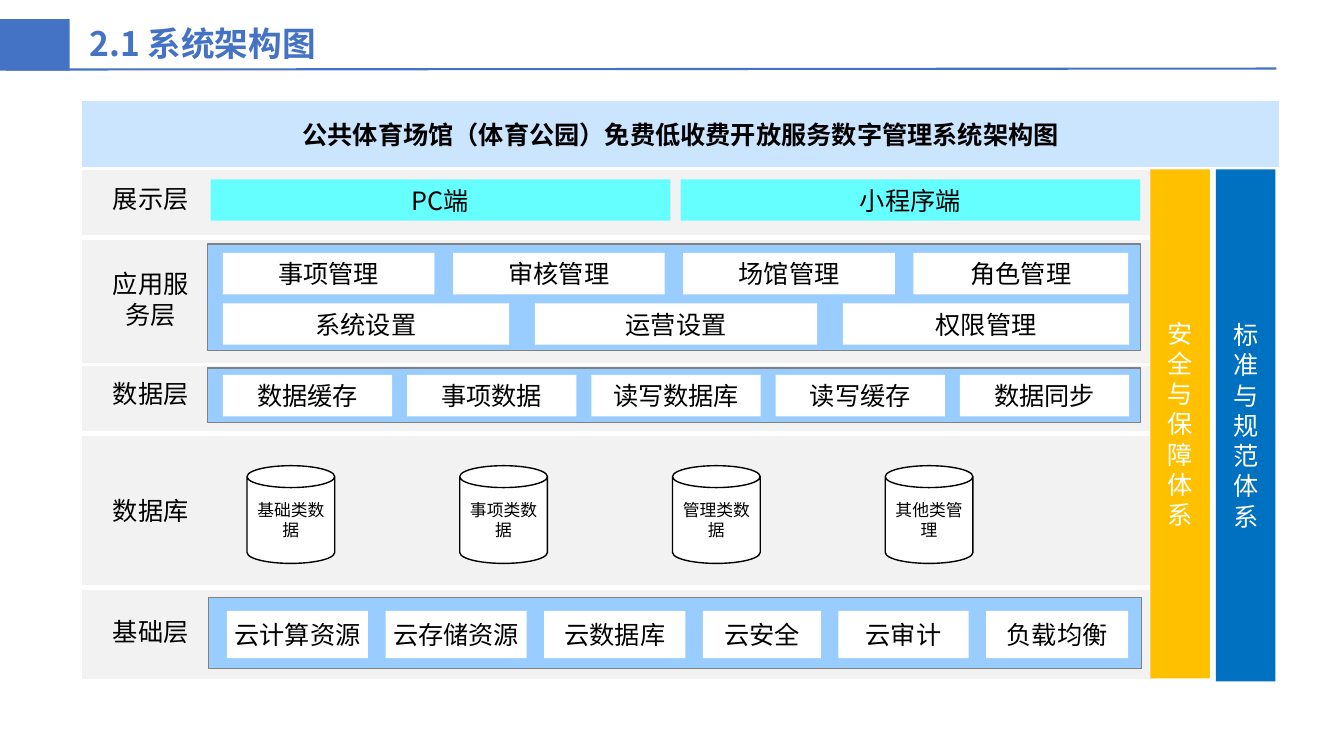
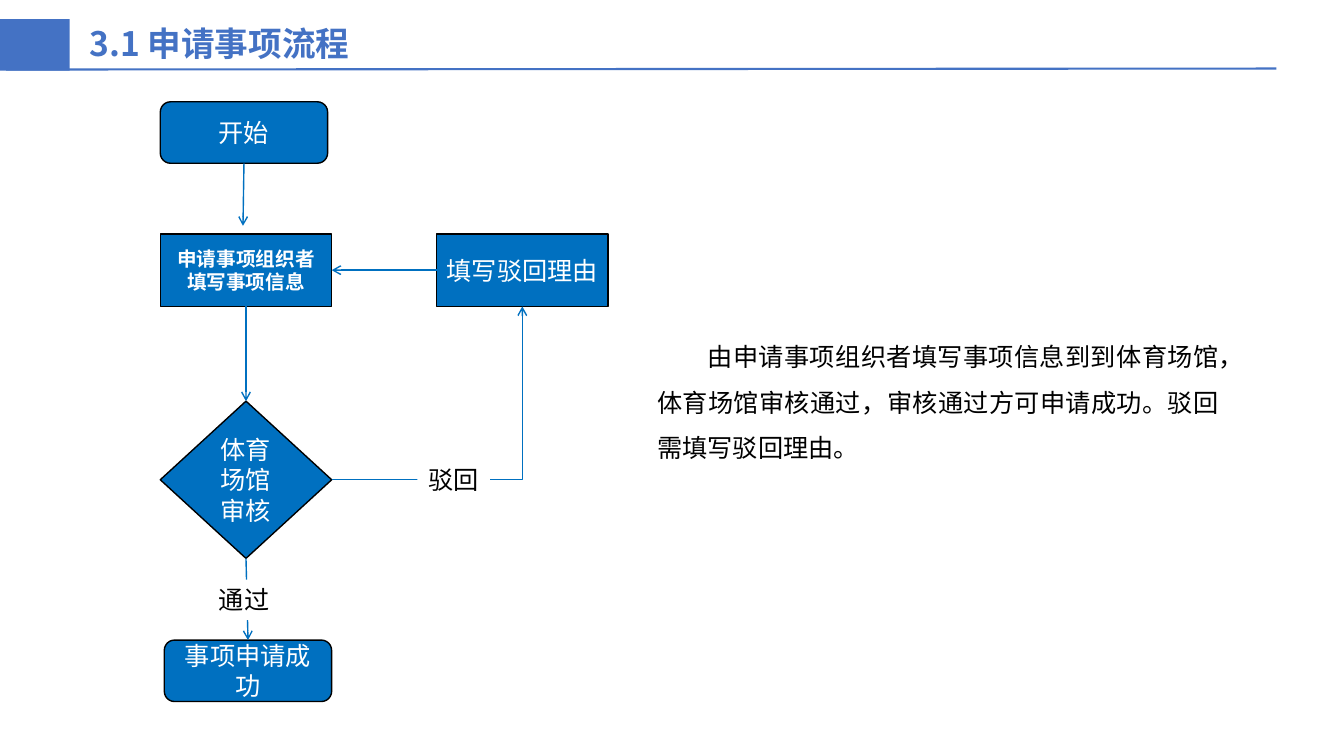
from dataclasses import dataclass
from lxml.etree import SubElement as Sub
from pptx import Presentation
from pptx.dml.color import RGBColor as Rgb
from pptx.enum.shapes import MSO_CONNECTOR as Link, MSO_SHAPE as Kind
from pptx.enum.text import MSO_ANCHOR as Anchor, PP_ALIGN as Align
from pptx.oxml.ns import qn
from pptx.util import Inches, Pt


@dataclass(frozen=True)
class Theme:
    font: str = "Noto Sans CJK SC"
    brand: str = "4472C4"
    blue: str = "0070C0"
    gold: str = "FFC000"
    sky: str = "99CCFF"
    pale: str = "CCE5FF"
    aqua: str = "66FFFF"
    mist: str = "F2F2F2"
    gray: str = "808080"
    white: str = "FFFFFF"
    black: str = "000000"
    title: int = 24
    body: int = 18
    note: int = 14
    small: int = 12


T = Theme()

# Content: architecture
HEAD = "公共体育场馆（体育公园）免费低收费开放服务数字管理系统架构图"
# Layer: name, band (top, height), label (top, height), panel box or None
LAYERS = [
    ("展示层", (1.68, 0.66), (1.76, 0.41), None),
    ("应用服务层", (2.37, 1.24), (2.45, 1.03), (2.06, 2.42, 9.25, 1.06)),
    ("数据层", (3.62, 0.66), (3.7, 0.41), (2.06, 3.65, 9.25, 0.54)),
    ("数据库", (4.32, 1.49), (4.86, 0.41), None),
    ("基础层", (5.85, 0.89), (6.06, 0.41), (2.07, 5.93, 9.25, 0.7)),
]
# Row: left, right, top, height, style, cells (text, width)
ROWS = [
    (2.09, 11.31, 1.78, 0.41, "aqua", [("PC端", 4.56), ("小程序端", 4.56)]),
    (2.21, 11.19, 2.51, 0.41, "cell",
     [("事项管理", 2.1), ("审核管理", 2.1), ("场馆管理", 2.1), ("角色管理", 2.13)]),
    (2.21, 11.2, 3.01, 0.41, "cell",
     [("系统设置", 2.84), ("运营设置", 2.8), ("权限管理", 2.84)]),
    (2.21, 11.2, 3.72, 0.41, "cell",
     [("数据缓存", 1.68), ("事项数据", 1.68), ("读写数据库", 1.68),
      ("读写缓存", 1.68), ("数据同步", 1.68)]),
    (2.45, 9.65, 4.62, 0.97, "can",
     [("基础类数据", 0.87), ("事项类数据", 0.87), ("管理类数据", 0.87),
      ("其他类管理", 0.87)]),
    (2.25, 11.19, 6.06, 0.47, "tight",
     [("云计算资源", 1.4), ("云存储资源", 1.4), ("云数据库", 1.4),
      ("云安全", 1.17), ("云审计", 1.29), ("负载均衡", 1.41)]),
]
STYLES = {
    "aqua": dict(fill=T.aqua),
    "cell": dict(fill=T.white),
    "can": dict(fill=T.white, line=T.black, kind=Kind.CAN, size=T.small),
    "tight": dict(fill=T.white, inset=0),
}
PILLARS = [
    ("安全与保障体系", 11.41, 5.05, T.gold),
    ("标准与规范体系", 12.06, 5.08, T.blue),
]

# Content: application flow
NODES = {
    "start": ("开始", (1.59, 1.01, 1.66, 0.61), Kind.ROUNDED_RECTANGLE, {}),
    "form": ("申请事项组织者填写事项信息", (1.59, 2.32, 1.7, 0.72), Kind.RECTANGLE,
             dict(size=T.note, bold=True)),
    "check": ("体育场馆审核", (1.59, 3.98, 1.7, 1.56), Kind.DIAMOND, {}),
    "done": ("事项申请成功", (1.63, 6.35, 1.66, 0.61), Kind.ROUNDED_RECTANGLE, {}),
    "reason": ("填写驳回理由", (4.33, 2.32, 1.7, 0.72), Kind.RECTANGLE, {}),
}
# Arrow: from node, side, to node, side
ARROWS = [
    ("form", 2, "check", 0),
    ("check", 2, "done", 0),
    ("check", 3, "reason", 2),
    ("reason", 1, "form", 3),
]
TAGS = [("通过", 2.06, 5.75), ("驳回", 4.14, 4.56)]
STORY = ("由申请事项组织者填写事项信息到到体育场馆，体育场馆审核通过，"
         "审核通过方可申请成功。驳回需填写驳回理由。")


# Drawing helpers
def write(shape, text, size=T.body, color=T.black, bold=False,
          align=Align.CENTER, anchor=Anchor.MIDDLE, inset=None):
    frame = shape.text_frame
    frame.word_wrap = True
    frame.vertical_anchor = anchor
    if inset is not None:
        frame.margin_left = frame.margin_right = Inches(inset)
        frame.margin_top = frame.margin_bottom = Inches(inset)
    para = frame.paragraphs[0]
    para.text = text
    para.alignment = align
    for run in para.runs:
        font = run.font
        font.size, font.bold = Pt(size), bold
        font.color.rgb = Rgb.from_string(color)
        font.name = T.font
        Sub(run._r.get_or_add_rPr(), qn("a:ea"), typeface=T.font)
    return para


def block(slide, box, fill, line=None, text="", kind=Kind.RECTANGLE, **style):
    shape = slide.shapes.add_shape(kind, *map(Inches, box))
    shape.shadow.inherit = False
    shape.fill.solid()
    shape.fill.fore_color.rgb = Rgb.from_string(fill)
    if line:
        shape.line.color.rgb = Rgb.from_string(line)
        shape.line.width = Pt(1)
    else:
        shape.line.fill.background()
    if text:
        write(shape, text, **style)
    return shape


def label(slide, box, text, **style):
    return write(slide.shapes.add_textbox(*map(Inches, box)), text, **style)


def wire(slide, ends, color, width, kind=Link.STRAIGHT, arrow=True):
    link = slide.shapes.add_connector(kind, *map(Inches, ends))
    link.line.color.rgb = Rgb.from_string(color)
    link.line.width = Pt(width)
    if arrow:
        Sub(link.line._get_or_add_ln(), qn("a:tailEnd"), type="arrow")
    Sub(link._element.spPr, qn("a:effectLst"))
    return link


def page(deck, title):
    slide = deck.slides.add_slide(deck.slide_layouts[6])
    block(slide, (0, 0.19, 0.69, 0.51), T.brand)
    wire(slide, (0.06, 0.69, 12.66, 0.68), T.brand, 1.5, arrow=False)
    label(slide, (0.79, 0.18, 12.43, 0.5), title, size=T.title, color=T.brand,
          bold=True, align=Align.LEFT, anchor=Anchor.TOP)
    return slide


def draw_stack(deck):
    slide = page(deck, "2.1 系统架构图")
    block(slide, (0.81, 1, 11.88, 0.66), T.pale, T.white, HEAD, bold=True)
    # Layer bands, names and panels
    for name, band, spot, panel in LAYERS:
        block(slide, (0.81, band[0], 10.66, band[1]), T.mist, T.white)
        label(slide, (0.94, spot[0], 1.11, spot[1]), name)
        if panel:
            block(slide, panel, T.sky, T.gray)
    # Cells spread with equal gaps
    for left, right, top, high, style, cells in ROWS:
        used = sum(wide for _, wide in cells)
        gap = (right - left - used) / (len(cells) - 1)
        for text, wide in cells:
            block(slide, (left, top, wide, high), text=text, **STYLES[style])
            left += wide + gap
    # Side pillars
    for text, left, high, fill in PILLARS:
        block(slide, (left, 1.68, 0.59, high), fill, text=text, color=T.white)


def draw_flow(deck):
    slide = page(deck, "3.1 申请事项流程")
    para = label(slide, (6.42, 3.19, 5.77, 1.77), STORY, align=Align.JUSTIFY,
                 anchor=Anchor.TOP)
    para.line_spacing = 1.5
    para._p.get_or_add_pPr().set("indent", str(Inches(0.5)))
    # Steps
    nodes = {key: block(slide, box, T.blue, T.black, text, kind,
                        color=T.white, **style)
             for key, (text, box, kind, style) in NODES.items()}
    # Arrows; the reject path turns one corner
    first = wire(slide, (2.42, 1.62, 2.41, 2.24), T.blue, 1)
    first.begin_connect(nodes["start"], 2)
    for source, out, target, into in ARROWS:
        bent = out % 2 != into % 2
        link = wire(slide, (0, 0, 0, 0), T.blue, 1,
                    Link.ELBOW if bent else Link.STRAIGHT)
        link.begin_connect(nodes[source], out)
        link.end_connect(nodes[target], into)
        if bent:
            link._element.spPr.find(qn("a:prstGeom")).set("prst", "bentConnector2")
    # Tags over the arrows
    for text, left, top in TAGS:
        block(slide, (left, top, 0.72, 0.4), T.white, text=text)


def main():
    deck = Presentation()
    deck.slide_width, deck.slide_height = Inches(13.33), Inches(7.5)
    draw_stack(deck)
    draw_flow(deck)
    deck.save("out.pptx")


if __name__ == "__main__":
    main()
